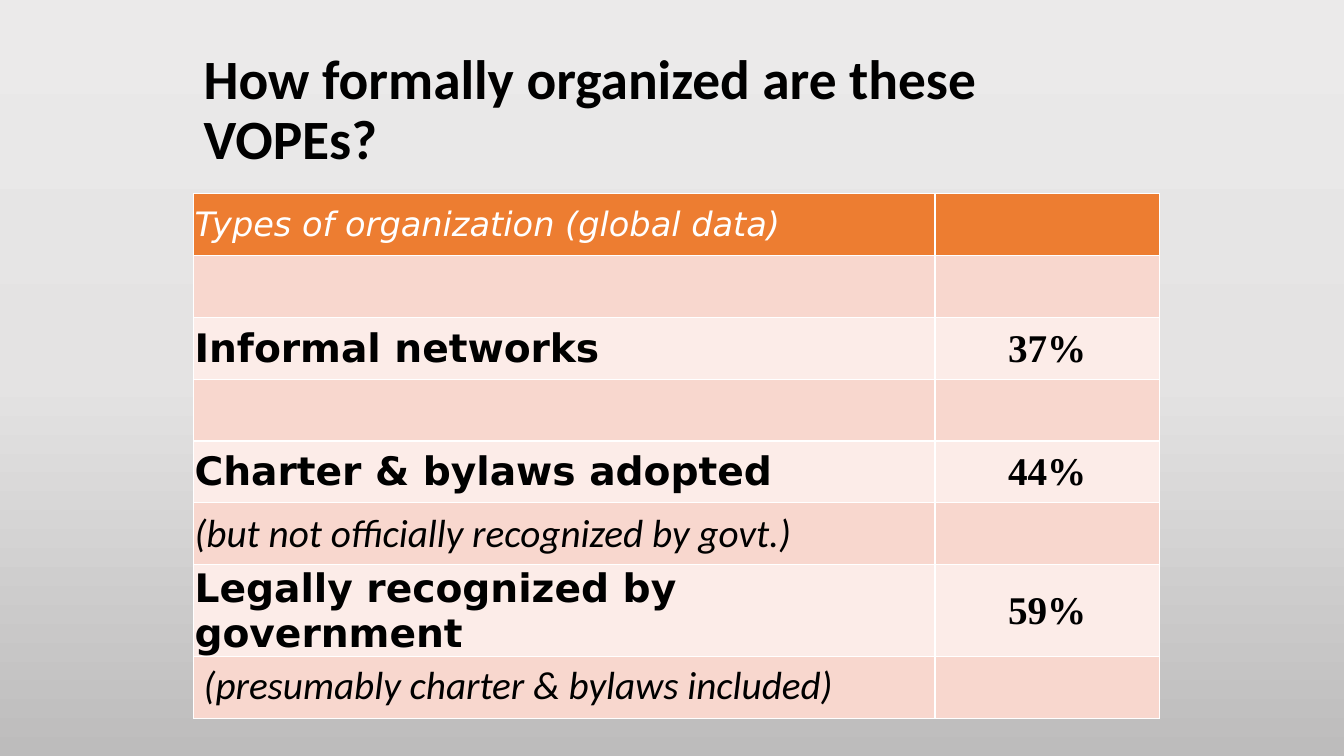
"""Build the slide on how formally organized VOPEs are."""
from lxml.etree import SubElement
from pptx import Presentation
from pptx.dml.color import RGBColor
from pptx.enum.text import MSO_ANCHOR, PP_ALIGN
from pptx.oxml import parse_xml
from pptx.oxml.ns import nsdecls, qn
from pptx.util import Pt

TITLE = "How formally organized are these VOPEs?"
ROWS = [
    ("header", "Types of organization (global data)", ""),
    ("gap", "", ""),
    ("type", "Informal networks", "37%"),
    ("gap", "", ""),
    ("type", "Charter & bylaws adopted", "44%"),
    ("remark", "(but not officially recognized by govt.)", ""),
    ("type", "Legally recognized by government", "59%"),
    ("closing", "(presumably charter & bylaws included)", ""),
]
LABEL_STYLES = {
    "header": ("DejaVu Sans", 24, "FFFFFF", False, True),
    "type": ("DejaVu Sans", 28, "000000", True, False),
    "remark": ("Calibri", 28, "000000", False, True),
    "closing": ("Calibri", 28, "000000", False, True),
}
SHARE_STYLE = ("Times New Roman", 28, "000000", True, False)
HEADER_FILL = "ED7D31"
BAND_FILLS = ("FCECE8", "F8D7CE")
BACKGROUND_STOPS = [(0, "EBEAEA"), (50, "E4E3E3"), (100, "BDBCBC")]
LEFT, WIDTH = 138.24, 690
TABLE_TOP, ROW_HEIGHT = 138.24, 44.2
COLUMN_WIDTHS = (529.6, 160.4)


def rgb(color):
    return RGBColor.from_string(color)


def format_text(paragraph, style):
    name, size, color, bold, italic = style
    for run in paragraph.runs:
        font = run.font
        font.name, font.size = name, Pt(size)
        font.bold, font.italic = bold, italic
        font.color.rgb = rgb(color)


def add_borders(cell):
    properties = cell._tc.get_or_add_tcPr()
    for position, side in enumerate(("lnL", "lnR", "lnT", "lnB")):
        properties.insert(position, parse_xml(
            f'<a:{side} {nsdecls("a")} w="{Pt(1)}"><a:solidFill>'
            f'<a:srgbClr val="FFFFFF"/></a:solidFill></a:{side}>'))


def fill_cell(cell, text, style, fill, inset):
    cell.fill.solid()
    cell.fill.fore_color.rgb = rgb(fill)
    add_borders(cell)
    if not text:
        return
    cell.text_frame.text = text
    format_text(cell.text_frame.paragraphs[0], style)
    if inset:
        cell.vertical_anchor = MSO_ANCHOR.MIDDLE
        cell.margin_left = cell.margin_right = cell.margin_top = Pt(0.75)
        cell.margin_bottom = Pt(0)


def set_background(slide):
    fill = slide.background.fill
    fill.gradient()
    fill.gradient_angle = 270
    stops = slide.background._cSld.find(".//" + qn("a:gsLst"))
    for stop in list(stops):
        stops.remove(stop)
    for percent, color in BACKGROUND_STOPS:
        stop = SubElement(stops, qn("a:gs"), pos=str(percent * 1000))
        SubElement(stop, qn("a:srgbClr"), val=color)


def add_title(slide):
    title = slide.shapes.title
    title.left, title.top = Pt(LEFT), Pt(41.76)
    title.width, title.height = Pt(WIDTH), Pt(76.32)
    frame = title.text_frame
    frame.text = TITLE
    frame.word_wrap = True
    frame.vertical_anchor = MSO_ANCHOR.MIDDLE
    heading = frame.paragraphs[0]
    heading.alignment = PP_ALIGN.LEFT
    heading.line_spacing = 0.9
    format_text(heading, ("Calibri", 39.6, "000000", True, False))


def add_organization_table(slide):
    table = slide.shapes.add_table(
        len(ROWS), len(COLUMN_WIDTHS), Pt(LEFT), Pt(TABLE_TOP),
        Pt(WIDTH), Pt(ROW_HEIGHT * len(ROWS))).table
    for column, width in zip(table.columns, COLUMN_WIDTHS):
        column.width = Pt(width)
    for index, (kind, label, share) in enumerate(ROWS):
        table.rows[index].height = Pt(ROW_HEIGHT)
        fill = HEADER_FILL if kind == "header" else BAND_FILLS[index % 2]
        label_cell, share_cell = table.rows[index].cells
        fill_cell(label_cell, label, LABEL_STYLES.get(kind), fill, kind != "closing")
        fill_cell(share_cell, share, SHARE_STYLE, fill, True)
        share_cell.text_frame.paragraphs[0].alignment = PP_ALIGN.CENTER


def main():
    presentation = Presentation()
    presentation.slide_width, presentation.slide_height = Pt(960), Pt(540)
    slide = presentation.slides.add_slide(presentation.slide_layouts[5])
    set_background(slide)
    add_title(slide)
    add_organization_table(slide)
    presentation.save("out.pptx")


if __name__ == "__main__":
    main()
